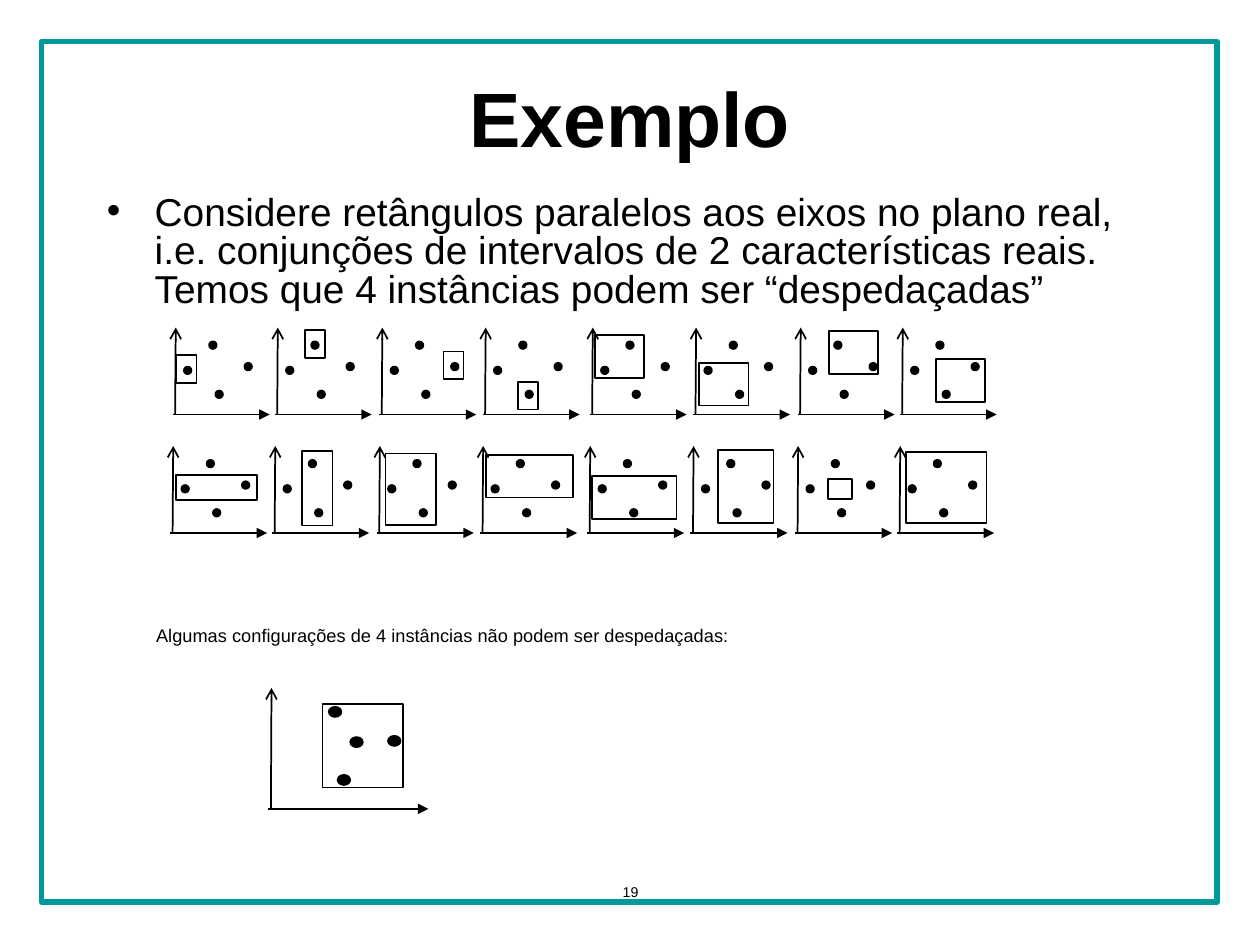
from lxml import etree
from pptx import Presentation
from pptx.dml.color import RGBColor
from pptx.enum.shapes import MSO_CONNECTOR, MSO_SHAPE
from pptx.enum.text import MSO_ANCHOR, PP_ALIGN
from pptx.oxml.ns import qn
from pptx.util import Inches, Pt

RECTANGLE, ELLIPSE = MSO_SHAPE.RECTANGLE, MSO_SHAPE.OVAL
STRAIGHT = MSO_CONNECTOR.STRAIGHT
LEFT, CENTER = PP_ALIGN.LEFT, PP_ALIGN.CENTER
TOP, MIDDLE = MSO_ANCHOR.TOP, MSO_ANCHOR.MIDDLE
BLACK, TEAL = "000000", "009999"

TITLE = "Exemplo"
STATEMENT = (
    "Considere retângulos paralelos aos eixos no plano real, i.e. conjunções de "
    "intervalos de 2 características reais. Temos que 4 instâncias podem ser “despedaçadas”"
)
CAPTION = "Algumas configurações de 4 instâncias não podem ser despedaçadas:"
PAGE_NUMBER = "19"

COLUMNS = [1.37, 2.18, 3.01, 3.83, 4.68, 5.5, 6.33, 7.14]
ROWS = [(0, 2.6), (-0.02, 3.54)]
PANEL_SIZE, PANEL_DOT = (0.77, 0.69), (0.06, 0.06)
INSTANCES = [(0.09, 0.31), (0.34, 0.5), (0.57, 0.28), (0.29, 0.11)]
SELECTIONS = [
    (1.4, 2.82, 0.16, 0.22), (2.42, 2.62, 0.16, 0.22),
    (3.52, 2.79, 0.16, 0.22), (4.11, 3.03, 0.16, 0.22),
    (4.72, 2.66, 0.39, 0.34), (5.55, 2.88, 0.39, 0.34),
    (6.58, 2.63, 0.39, 0.34), (7.43, 2.85, 0.39, 0.34),
    (1.4, 3.77, 0.64, 0.2), (2.4, 3.58, 0.24, 0.59),
    (3.06, 3.6, 0.4, 0.57), (3.86, 3.61, 0.69, 0.34),
    (4.7, 3.78, 0.67, 0.34), (5.7, 3.57, 0.44, 0.58),
    (6.57, 3.8, 0.19, 0.16), (7.19, 3.59, 0.64, 0.56),
]

COUNTER_ORIGIN, COUNTER_SIZE, COUNTER_DOT = (2.13, 5.46), (1.27, 0.96), (0.1, 0.08)
COUNTER_INSTANCES = [(0.65, 0.39), (0.55, 0.69), (0.95, 0.38), (0.48, 0.15)]
COUNTER_SELECTION = (2.56, 5.59, 0.64, 0.66)


def color(value):
    """Turn a hex string into a colour."""
    return RGBColor.from_string(value)


def add_outline(shapes, kind, place, line=BLACK, width=1, fill=None):
    """Draw a preset shape with an outline and an optional fill."""
    shape = shapes.add_shape(kind, *map(Inches, place))
    shape.shadow.inherit = False
    if fill:
        shape.fill.solid()
        shape.fill.fore_color.rgb = color(fill)
    else:
        shape.fill.background()
    shape.line.color.rgb = color(line)
    shape.line.width = Pt(width)
    return shape


def add_axis(shapes, start, end, tip, style):
    """Draw one axis with an arrowhead at the named tip."""
    axis = shapes.add_connector(STRAIGHT, *map(Inches, start + end))
    axis.line.color.rgb = color(BLACK)
    axis.line.width = Pt(1)
    etree.SubElement(axis.line._get_or_add_ln(), qn("a:" + tip), type=style)
    etree.SubElement(axis._element.spPr, qn("a:effectLst"))


def add_plane(page, origin, size, dot, instances):
    """Draw a grouped pair of axes with its instances and return the group."""
    (x, y), (width, height) = origin, size
    shapes = page.shapes.add_group_shape().shapes
    add_axis(shapes, (x + 0.025, y), (x + 0.02, y + height), "headEnd", "arrow")
    add_axis(shapes, (x, y + height), (x + width, y + height), "tailEnd", "triangle")
    for dx, dy in instances:
        add_outline(shapes, ELLIPSE, (x + dx, y + dy, *dot), fill=BLACK)
    return shapes


def add_text(page, place, text, size, bold=False, align=LEFT, anchor=TOP, wrap=True):
    """Write one paragraph in a text box and return the paragraph."""
    box = page.shapes.add_textbox(*map(Inches, place))
    frame = {"word_wrap": wrap, "vertical_anchor": anchor}
    for name, value in frame.items():
        setattr(box.text_frame, name, value)
    para = box.text_frame.paragraphs[0]
    para.alignment = align
    span = para.add_run()
    span.text = text
    for name, value in {"name": "Arial", "size": Pt(size), "bold": bold}.items():
        setattr(span.font, name, value)
    span.font.color.rgb = color(BLACK)
    return para


def add_bullet(para, indent):
    """Give a paragraph a hanging bullet."""
    properties = para._p.get_or_add_pPr()
    properties.set("marL", str(Inches(indent)))
    properties.set("indent", str(-Inches(indent)))
    etree.SubElement(properties, qn("a:buFont"), typeface="Arial")
    etree.SubElement(properties, qn("a:buChar"), char="•")


def lower(para):
    """Set the text of a paragraph as subscript."""
    para.runs[0].font._element.set("baseline", "-25000")


def main():
    """Build the slide and save the deck."""
    deck = Presentation()
    deck.slide_width, deck.slide_height = Inches(10), Inches(7.5)
    page = deck.slides.add_slide(deck.slide_layouts[6])

    add_outline(page.shapes, RECTANGLE, (0.33, 0.33, 9.33, 6.83), TEAL, 3)
    lower(add_text(page, (3.42, 6.83, 3.17, 0.52), PAGE_NUMBER, 14, align=CENTER))
    add_text(page, (0.5, 0.3, 9, 1.25), TITLE, 44, True, CENTER, MIDDLE)

    statement = add_text(page, (0.75, 1.5, 8.5, 1.07), STATEMENT, 22.2)
    statement.line_spacing = 0.83
    statement.space_before = Pt(4.4)
    add_bullet(statement, 0.38)

    for shift, top in ROWS:
        for left in COLUMNS:
            add_plane(page, (left + shift, top), PANEL_SIZE, PANEL_DOT, INSTANCES)
    for place in SELECTIONS:
        add_outline(page.shapes, RECTANGLE, place)

    lower(add_text(page, (1.14, 4.74, 8.11, 0.41), CAPTION, 18, wrap=False))
    counterexample = add_plane(
        page, COUNTER_ORIGIN, COUNTER_SIZE, COUNTER_DOT, COUNTER_INSTANCES)
    add_outline(counterexample, RECTANGLE, COUNTER_SELECTION)
    deck.save("out.pptx")


if __name__ == "__main__":
    main()
